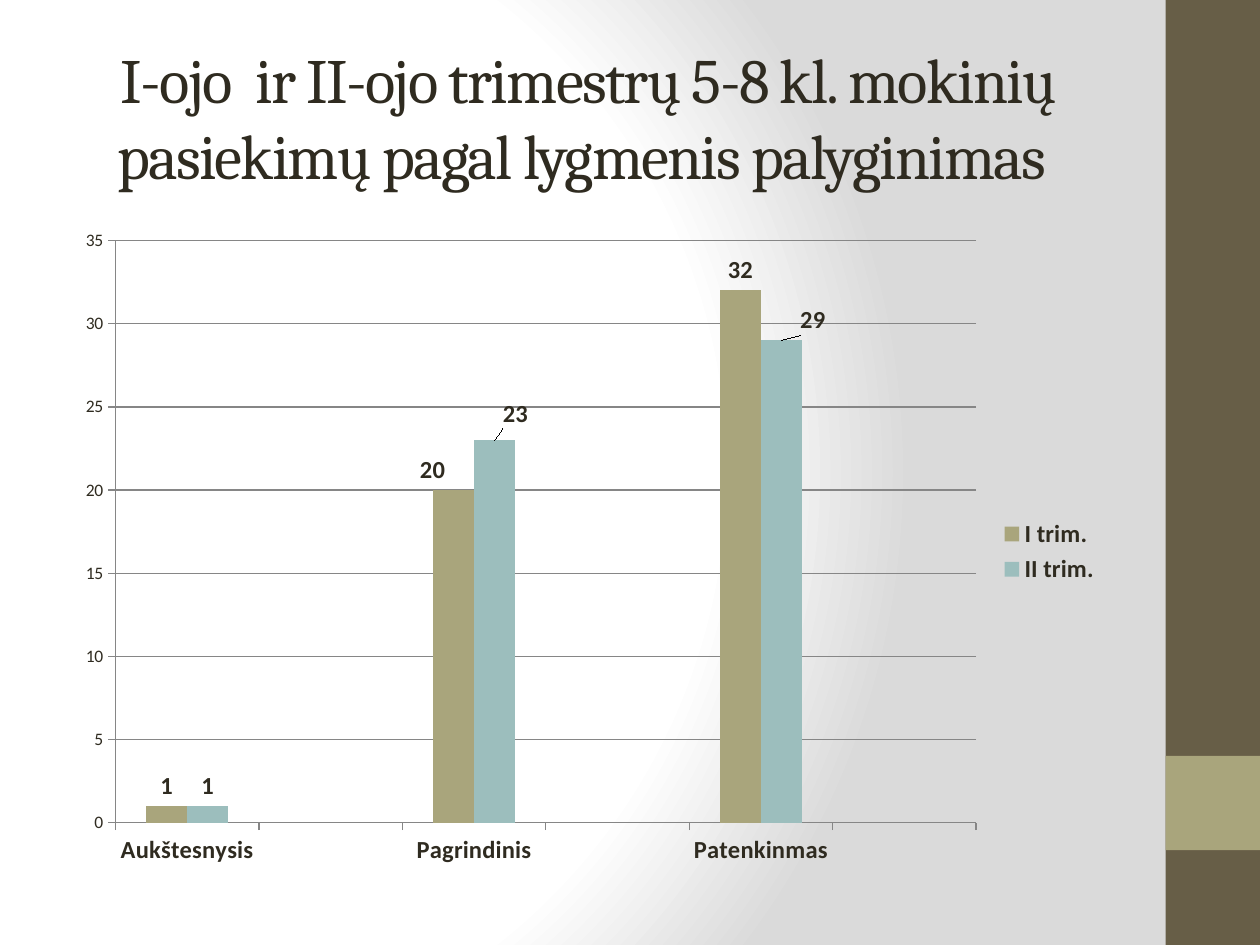
"""Build a slide comparing pupil achievement levels across two trimesters."""
from pptx import Presentation
from pptx.chart.data import CategoryChartData
from pptx.dml.color import RGBColor
from pptx.enum.chart import XL_CHART_TYPE as ChartType
from pptx.enum.chart import XL_LABEL_POSITION as LabelPosition
from pptx.enum.chart import XL_LEGEND_POSITION as LegendPosition
from pptx.enum.chart import XL_TICK_MARK as TickMark
from pptx.enum.shapes import MSO_SHAPE as Shape
from pptx.enum.text import MSO_ANCHOR as Anchor
from pptx.enum.text import MSO_AUTO_SIZE as AutoSize
from pptx.enum.text import PP_ALIGN as Align
from pptx.oxml import parse_xml
from pptx.oxml.ns import nsdecls
from pptx.util import Cm, Pt


def color(value):
    """Return the colour for a hex string."""
    return RGBColor.from_string(value)


def manual_layout(x, y, extra=""):
    """Return a chart layout element with the given offsets."""
    return parse_xml(
        f'<c:layout {nsdecls("c")}><c:manualLayout>{extra}'
        f'<c:x val="{x}"/><c:y val="{y}"/></c:manualLayout></c:layout>'
    )


INK, OLIVE, TEAL, BROWN, GRAY = "2F2B20", "A9A57C", "9CBEBD", "675E47", "868686"

deck = Presentation()
deck.slide_width, deck.slide_height = Cm(25.4), Cm(19.05)
slide = deck.slides.add_slide(deck.slide_layouts[5])

slide.background.fill.gradient()
gradient = slide._element.xpath(".//p:bgPr/a:gradFill")[0]
stops = "".join(
    f'<a:gs pos="{place * 1000}"><a:srgbClr val="{shade}"/></a:gs>'
    for place, shade in [(0, "FFFFFF"), (75, "FFFFFF"), (100, "DADADA")]
)
gradient.getparent().replace(gradient, parse_xml(
    f'<a:gradFill {nsdecls("a")} rotWithShape="1"><a:gsLst>{stops}</a:gsLst>'
    '<a:path path="circle"><a:fillToRect l="20000" t="50000" r="100000" b="50000"/>'
    '</a:path></a:gradFill>'
))

for top, height, shade in [(0, 19.05, BROWN), (15.24, 1.9, OLIVE)]:
    band = slide.shapes.add_shape(Shape.RECTANGLE, Cm(23.5), Cm(top), Cm(1.9), Cm(height))
    band.shadow.inherit = False
    band.fill.solid()
    band.fill.fore_color.rgb = color(shade)
    band.line.fill.background()

title = slide.shapes.title
title.left, title.top, title.width, title.height = Cm(1.27), Cm(0.76), Cm(21.16), Cm(3.18)
frame = title.text_frame
frame.word_wrap = True
frame.auto_size = AutoSize.NONE
frame.vertical_anchor = Anchor.MIDDLE
para = frame.paragraphs[0]
para.alignment = Align.CENTER
span = para.add_run()
span.text = "I-ojo  ir II-ojo trimestrų 5-8 kl. mokinių pasiekimų pagal lygmenis palyginimas "
span.font.name, span.font.size = "Cambria", Pt(36)
span.font.color.rgb = color(INK)
span.font._element.set("spc", "-100")

data = CategoryChartData()
data.categories = ["Aukštesnysis", "", "Pagrindinis", "", "Patenkinmas", ""]
data.add_series("I trim.", [1, None, 20, None, 32, None])
data.add_series("II trim.", [1, None, 23, None, 29, None])
chart = slide.shapes.add_chart(
    ChartType.COLUMN_CLUSTERED, Cm(1.27), Cm(4.45), Cm(21.16), Cm(13.34), data
).chart
chart.has_title = False
chart.font.name, chart.font.size = "Calibri", Pt(10)
chart.font.color.rgb = color(INK)
chart.has_legend = True
chart.legend.position = LegendPosition.RIGHT
chart.legend.include_in_layout = False

values, categories = chart.value_axis, chart.category_axis
values.minimum_scale, values.maximum_scale, values.major_unit = 0, 35, 5
values.has_major_gridlines = True
for axis in (values, categories):
    axis.major_tick_mark = TickMark.OUTSIDE
    axis.minor_tick_mark = TickMark.NONE
for line in (values.format.line, categories.format.line, values.major_gridlines.format.line):
    line.color.rgb = color(GRAY)
    line.width = Pt(0.75)

plot = chart.plots[0]
plot.gap_width, plot.overlap, plot.vary_by_categories = 150, 0, False
plot_area = chart._chartSpace.chart.plotArea
for old_layout in plot_area.xpath("c:layout"):
    plot_area.remove(old_layout)
plot_layout = manual_layout(
    0.05, 0.03, '<c:layoutTarget val="inner"/><c:xMode val="edge"/><c:yMode val="edge"/>'
)
for side, share in [("w", 0.82), ("h", 0.88)]:
    plot_layout[0].append(parse_xml(f'<c:{side} {nsdecls("c")} val="{share}"/>'))
plot_area.insert(0, plot_layout)

bold_fonts = [chart.legend.font, categories.tick_labels.font]
label_shifts = [{2: (-0.02, 0)}, {2: (0.02, -0.01), 4: (0.03, 0)}]
for series, shade, shifts in zip(plot.series, [OLIVE, TEAL], label_shifts):
    series.format.fill.solid()
    series.format.fill.fore_color.rgb = color(shade)
    series.invert_if_negative = False
    labels = series.data_labels
    labels.show_value = True
    labels.position = LabelPosition.OUTSIDE_END
    bold_fonts.append(labels.font)
    for index, (x, y) in shifts.items():
        label = series.points[index].data_label
        label.position = LabelPosition.OUTSIDE_END
        bold_fonts.append(label.font)
        element = series._element.xpath(f"c:dLbls/c:dLbl[c:idx/@val={index}]")[0]
        element.insert(1, manual_layout(x, y))

for font in bold_fonts:
    font.name, font.size, font.bold = "Calibri", Pt(14), True
    font.color.rgb = color(INK)

deck.save("out.pptx")
